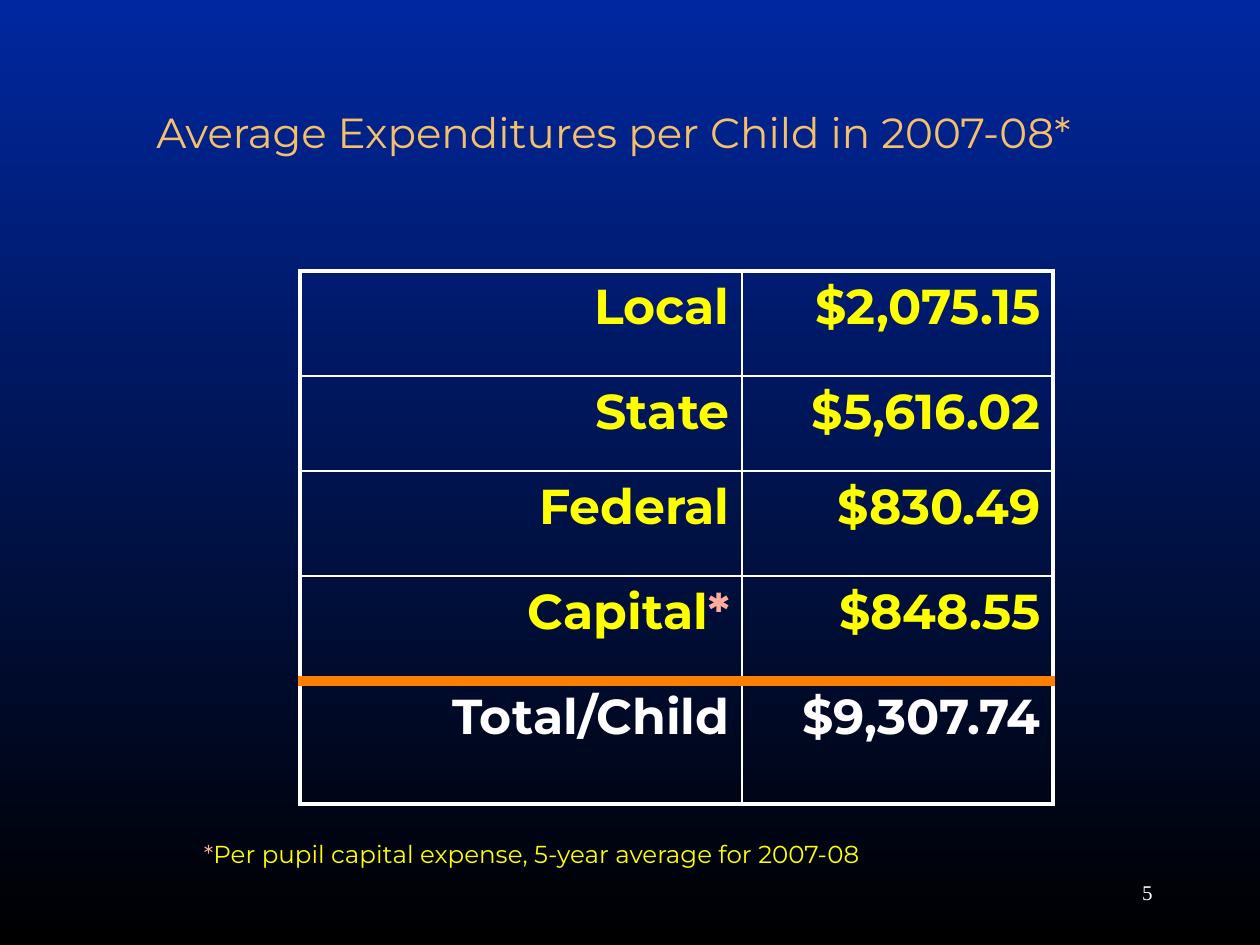
from lxml import etree
from pptx import Presentation, util as u
from pptx.dml.color import RGBColor
from pptx.enum import text
from pptx.oxml import ns

PX = 914400 // 126
FONT = "Montserrat"
WHITE, YELLOW, PINK, ORANGE, GOLD = "FFFFFF", "FFFF00", "FFAB9D", "FF8000", "F6BF69"
BACKGROUND = ["00279F", "000000"]

TITLE = [("Average Expenditures per Child in 2007-08*", GOLD)]
FOOTNOTE = [("*", PINK), ("Per pupil capital expense, 5-year average for 2007-08", YELLOW)]
PAGE = [("5", WHITE)]
EXPENDITURES = [
    ([("Local", YELLOW)], [("$2,075.15", YELLOW)]),
    ([("State", YELLOW)], [("$5,616.02", YELLOW)]),
    ([("Federal", YELLOW)], [("$830.49", YELLOW)]),
    ([("Capital", YELLOW), ("*", PINK)], [("$848.55", YELLOW)]),
    ([("Total/Child", WHITE)], [("$9,307.74", WHITE)]),
]
COLUMNS = [442, 311]
ROWS = [105, 95, 105, 105, 123]
THIN, OUTER, TOTAL = (WHITE, 1), (WHITE, 2.25), (ORANGE, 6)

RIGHT, CENTER = text.PP_ALIGN.RIGHT, text.PP_ALIGN.CENTER


def px(*lengths):
    return [n * PX for n in lengths]


def rgb(color):
    return RGBColor.from_string(color)


def write(frame, runs, size, align, font=FONT, bold=False):
    paragraph = frame.paragraphs[0]
    paragraph.alignment = align
    for words, color in runs:
        run = paragraph.add_run()
        run.text = words
        run.font.name, run.font.size, run.font.bold = font, u.Pt(size), bold
        run.font.color.rgb = rgb(color)


def middle(frame):
    frame.word_wrap = True
    frame.vertical_anchor = text.MSO_ANCHOR.MIDDLE


def set_borders(cell, borders):
    """Put borders, a dict of side letter to (color, points), before the cell's fill."""
    properties = cell._tc.get_or_add_tcPr()
    for position, side in enumerate("LRTB"):
        color, width = borders[side]
        line = etree.Element(ns.qn("a:ln" + side), w=str(int(u.Pt(width))))
        fill = etree.SubElement(line, ns.qn("a:solidFill"))
        etree.SubElement(fill, ns.qn("a:srgbClr"), val=color)
        properties.insert(position, line)


prs = Presentation()
prs.slide_width, prs.slide_height = px(1260, 945)
slide = prs.slides.add_slide(prs.slide_layouts[5])

background = slide.background.fill
background.gradient()
background.gradient_angle = 270
for stop, color in zip(background.gradient_stops, BACKGROUND):
    stop.color.rgb = rgb(color)

title = slide.shapes.title
title.left, title.top, title.width, title.height = px(95, 53, 1037, 157)
middle(title.text_frame)
write(title.text_frame, TITLE, 24, CENTER)

table = slide.shapes.add_table(
    len(ROWS), len(COLUMNS), *px(300, 271, sum(COLUMNS), sum(ROWS))).table
table.first_row = table.horz_banding = False
for column, width in zip(table.columns, px(*COLUMNS)):
    column.width = width
for row, height in zip(table.rows, px(*ROWS)):
    row.height = height

# Horizontal rules from top to bottom and vertical rules from left to right
rules = [OUTER, THIN, THIN, THIN, TOTAL, OUTER]
uprights = [OUTER, THIN, OUTER]
for r, entries in enumerate(EXPENDITURES):
    for c, runs in enumerate(entries):
        cell = table.cell(r, c)
        cell.fill.background()
        write(cell.text_frame, runs, 28, RIGHT, bold=True)
        set_borders(cell, {"L": uprights[c], "R": uprights[c + 1],
                           "T": rules[r], "B": rules[r + 1]})

for runs, box, size, align, font in [
    (FOOTNOTE, (144, 832, 776, 43), 14, CENTER, FONT),
    (PAGE, (903, 861, 262, 63), 12, RIGHT, "Times New Roman"),
]:
    frame = slide.shapes.add_textbox(*px(*box)).text_frame
    middle(frame)
    write(frame, runs, size, align, font)

prs.save("out.pptx")
